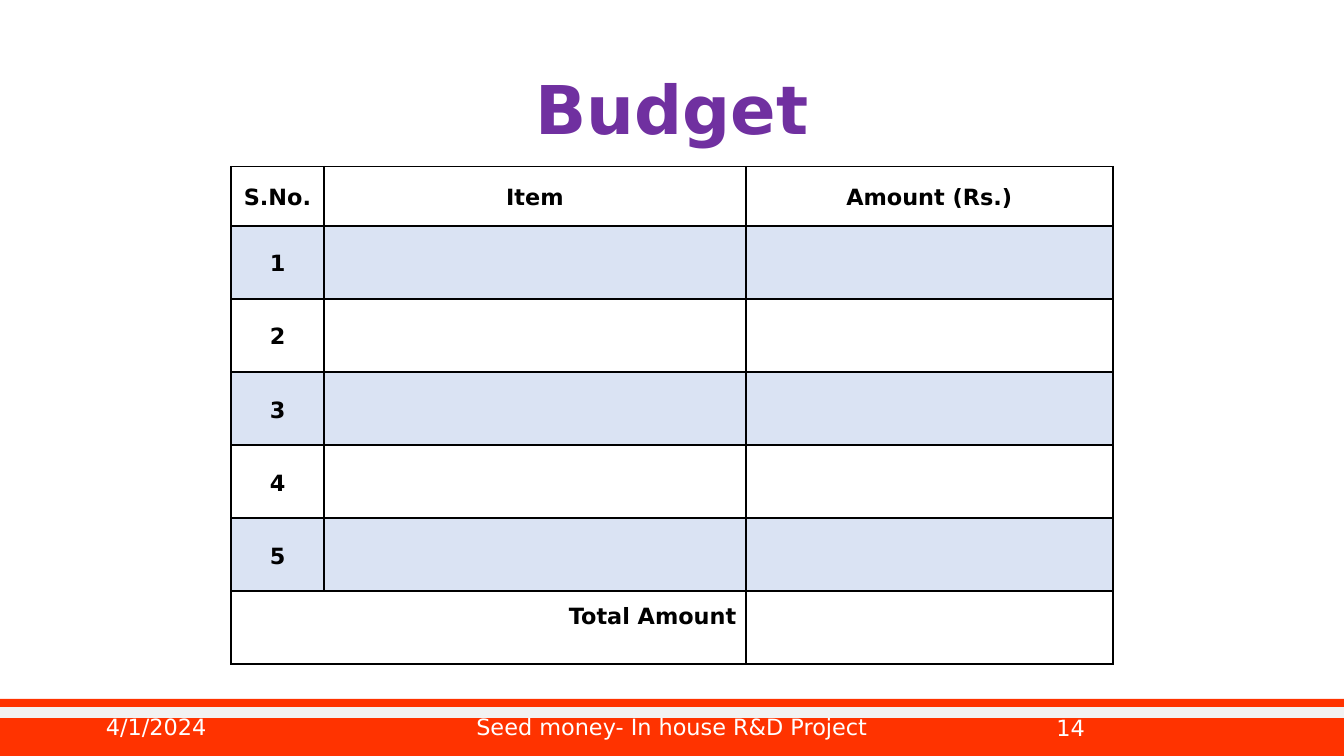
from dataclasses import dataclass

from lxml import etree
from pptx import Presentation
from pptx import util as u
from pptx.dml.color import RGBColor
from pptx.enum import shapes, text
from pptx.oxml import ns


@dataclass(frozen=True)
class Theme:
    font: str = "DejaVu Sans"
    title: RGBColor = RGBColor.from_string("7030A0")
    ink: RGBColor = RGBColor.from_string("000000")
    footer: RGBColor = RGBColor.from_string("FF3300")
    stripe: RGBColor = RGBColor.from_string("F2F2F2")
    white: RGBColor = RGBColor.from_string("FFFFFF")
    band: RGBColor = RGBColor.from_string("DAE3F3")
    title_size: int = 36
    text_size: int = 12


theme = Theme()
align = text.PP_ALIGN


def write(frame, words, size, color, alignment, bold=False):
    """Put one formatted paragraph in a text frame and return it."""
    paragraph = frame.paragraphs[0]
    paragraph.text = words
    paragraph.alignment = alignment
    font = paragraph.font
    font.name, font.size, font.bold = theme.font, u.Pt(size), bold
    font.color.rgb = color
    return paragraph


def add_borders(cell):
    """Draw a thin line on all four sides of a cell."""
    properties = cell._tc.get_or_add_tcPr()
    for side in ("lnL", "lnR", "lnT", "lnB"):
        line = etree.SubElement(properties, ns.qn(f"a:{side}"), w=str(u.Pt(1)))
        fill = etree.SubElement(line, ns.qn("a:solidFill"))
        etree.SubElement(fill, ns.qn("a:srgbClr"), val=str(theme.ink))


# Widescreen slide, 16:9
presentation = Presentation()
presentation.slide_width = u.Inches(10)
presentation.slide_height = u.Inches(10 * 9 / 16)
slide = presentation.slides.add_slide(presentation.slide_layouts[5])

# Footer band with a light stripe
band = slide.shapes.add_shape(
    shapes.MSO_SHAPE.RECTANGLE, u.Inches(-0.02), u.Inches(5.2), u.Inches(10.02), u.Inches(0.43))
band.shadow.inherit = False
band.fill.solid()
band.fill.fore_color.rgb = theme.footer
band.line.fill.background()

stripe = slide.shapes.add_connector(
    shapes.MSO_CONNECTOR.STRAIGHT, u.Inches(-0.02), u.Inches(5.3), u.Inches(10), u.Inches(5.3))
stripe.line.color.rgb = theme.stripe
stripe.line.width = u.Pt(6)
etree.SubElement(stripe._element.spPr, ns.qn("a:effectLst"))

# Title
title = slide.shapes.title
title.left, title.top = u.Inches(0.69), u.Inches(0.3)
title.width, title.height = u.Inches(8.62), u.Inches(1.08)
title.text_frame.vertical_anchor = text.MSO_ANCHOR.MIDDLE
heading = write(title.text_frame, "Budget", theme.title_size, theme.title, align.CENTER, bold=True)
heading.line_spacing = 0.9

# Date, project name and slide number
for words, left, width, height, alignment in (
    ("4/1/2024", 0.69, 2.25, 0.21, align.LEFT),
    ("Seed money- In house R&D Project", 3.31, 3.38, 0.21, align.CENTER),
    ("14", 7.06, 1.11, 0.22, align.RIGHT),
):
    box = slide.shapes.add_textbox(u.Inches(left), u.Inches(5.3), u.Inches(width), u.Inches(height))
    box.text_frame.word_wrap = True
    box.text_frame.vertical_anchor = text.MSO_ANCHOR.MIDDLE
    write(box.text_frame, words, theme.text_size, theme.white, alignment)

# Budget table
headers = ["S.No.", "Item", "Amount (Rs.)"]
item_count = 5
rows = [headers] + [[str(number), "", ""] for number in range(1, item_count + 1)]
rows.append(["Total Amount", "", ""])
total_row = len(rows) - 1
header_height, table_height = 0.44, 3.7
row_height = (table_height - header_height) / total_row

table = slide.shapes.add_table(
    len(rows), len(headers), u.Inches(1.72), u.Inches(1.24), u.Inches(6.57), u.Inches(table_height)).table
table.first_row = table.horz_banding = False
for column, width in zip(table.columns, (0.69, 3.14, 2.73)):
    column.width = u.Inches(width)
for index, row in enumerate(table.rows):
    row.height = u.Inches(row_height if index else header_height)
table.cell(total_row, 0).merge(table.cell(total_row, 1))

for row_index, row in enumerate(rows):
    is_total = row_index == total_row
    for column_index, words in enumerate(row):
        cell = table.cell(row_index, column_index)
        add_borders(cell)
        if row_index % 2 and not is_total:
            cell.fill.solid()
            cell.fill.fore_color.rgb = theme.band
        else:
            cell.fill.background()
        if not words:
            continue
        cell.margin_left = cell.margin_right = u.Inches(0.07)
        cell.margin_top = cell.margin_bottom = 0
        cell.vertical_anchor = text.MSO_ANCHOR.TOP if is_total else text.MSO_ANCHOR.MIDDLE
        paragraph = write(cell.text_frame, words, theme.text_size, theme.ink,
                          align.RIGHT if is_total else align.CENTER, bold=True)
        paragraph.line_spacing = 1.5 if is_total else 1.15
        paragraph.space_after = u.Pt(10)

presentation.save("out.pptx")
